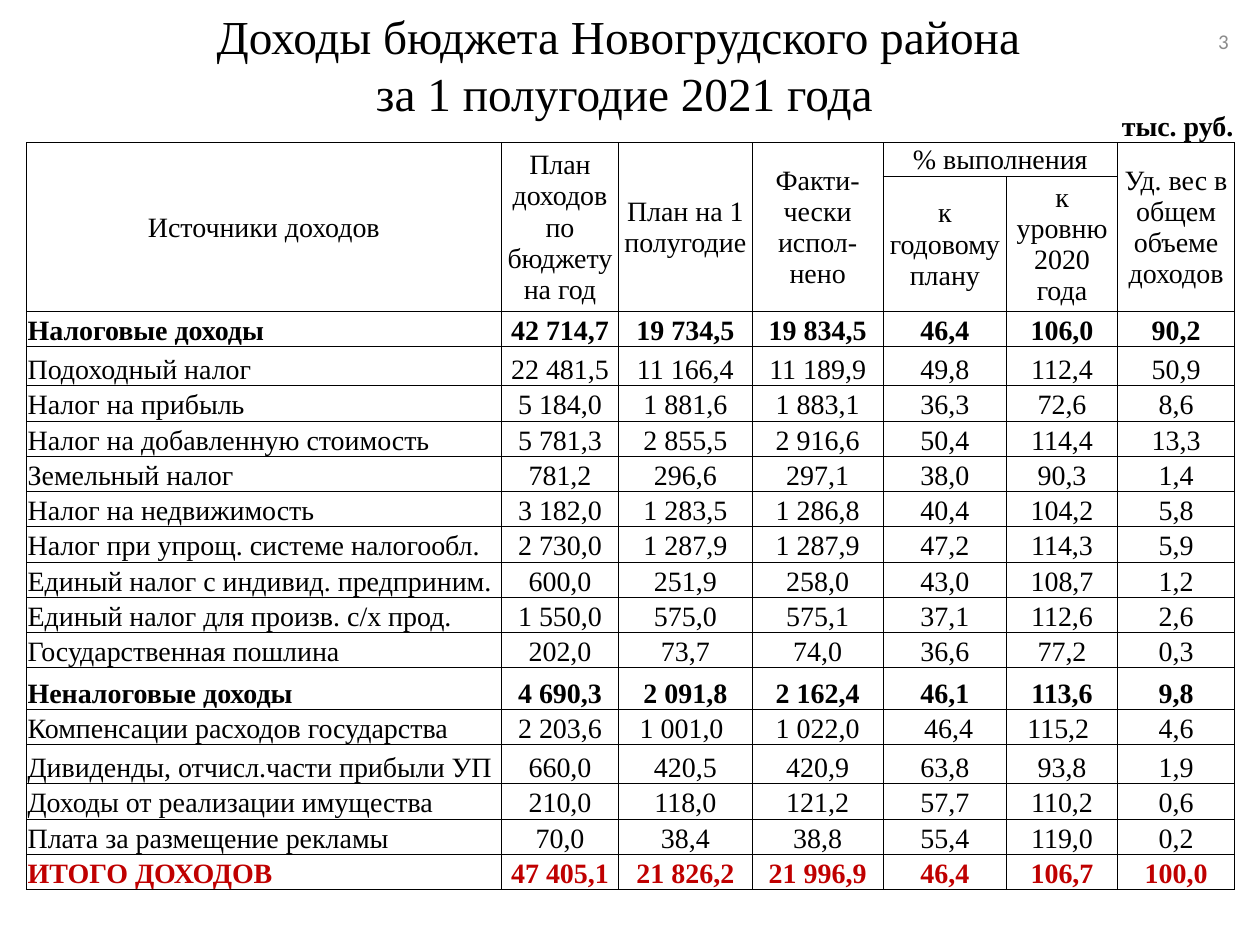
from lxml import etree
from pptx import Presentation
from pptx import util as u
from pptx.dml.color import RGBColor
from pptx.enum import text
from pptx.oxml.ns import qn

BLACK = RGBColor(0, 0, 0)
RED = RGBColor(0xC0, 0, 0)
GREY = RGBColor(0x8C, 0x8C, 0x8C)
SERIF = "Times New Roman"
LEFT, MID, RIGHT = text.PP_ALIGN.LEFT, text.PP_ALIGN.CENTER, text.PP_ALIGN.RIGHT
PLAIN = "{2D5ABB26-0587-4C30-8999-92F81FD0307C}"

HEADS = {
    (0, 5): "тыс. руб.",
    (1, 0): "Источники доходов",
    (1, 1): "План доходов по бюджету на год",
    (1, 2): "План на 1 полугодие",
    (1, 3): "Факти-чески испол-нено",
    (1, 4): "% выполнения",
    (1, 6): "Уд. вес в общем объеме доходов",
    (2, 4): "к годовому плану",
    (2, 5): "к\nуровню 2020 года",
}
DATA = [
    "Налоговые доходы|42 714,7|19 734,5|19 834,5|46,4|106,0|90,2",
    "Подоходный налог|22 481,5|11 166,4|11 189,9|49,8|112,4|50,9",
    "Налог на прибыль|5 184,0|1 881,6|1 883,1|36,3|72,6|8,6",
    "Налог на добавленную стоимость|5 781,3|2 855,5|2 916,6|50,4|114,4|13,3",
    "Земельный налог|781,2|296,6|297,1|38,0|90,3|1,4",
    "Налог на недвижимость|3 182,0|1 283,5|1 286,8|40,4|104,2|5,8",
    "Налог при упрощ. системе налогообл.|2 730,0|1 287,9|1 287,9|47,2|114,3|5,9",
    "Единый налог с индивид. предприним.|600,0|251,9|258,0|43,0|108,7|1,2",
    "Единый налог для произв. с/х прод.|1 550,0|575,0|575,1|37,1|112,6|2,6",
    "Государственная пошлина|202,0|73,7|74,0|36,6|77,2|0,3",
    "Неналоговые доходы|4 690,3|2 091,8|2 162,4|46,1|113,6|9,8",
    "Компенсации расходов государства|2 203,6|1 001,0|1 022,0|46,4|115,2|4,6",
    "Дивиденды, отчисл.части прибыли УП|660,0|420,5|420,9|63,8|93,8|1,9",
    "Доходы от реализации имущества|210,0|118,0|121,2|57,7|110,2|0,6",
    "Плата за размещение рекламы|70,0|38,4|38,8|55,4|119,0|0,2",
    "ИТОГО ДОХОДОВ|47 405,1|21 826,2|21 996,9|46,4|106,7|100,0",
]
COLS = [3.77, 0.93, 1.06, 1.04, 0.98, 0.88, 0.93]
TALL = {0: 0.27, 1: 0.27, 2: 1.07, 4: 0.31, 13: 0.33, 15: 0.31}
SPANS = [(0, 5, 0, 6), (1, 4, 1, 5), (1, 6, 2, 6)] + [(1, c, 2, c) for c in range(4)]
BOLD = {0, 3, 13, 18}
NUDGE = {(14, 2): "margin_right", (14, 4): "margin_left", (14, 5): "margin_right"}


def style(frame, side, color, **font):
    for para in frame.paragraphs:
        para.alignment = side
        for run in para.runs:
            run.font.color.rgb = color
            for key, val in font.items():
                setattr(run.font, key, val)


def border(cell, tags):
    props = cell._tc.get_or_add_tcPr()
    for spot, tag in enumerate(tags):
        line = etree.Element(qn("a:" + tag), w=str(u.Pt(0.5)))
        fill = etree.SubElement(line, qn("a:solidFill"))
        etree.SubElement(fill, qn("a:srgbClr"), val=str(BLACK))
        props.insert(spot, line)


deck = Presentation()
deck.slide_width, deck.slide_height = u.Inches(10), u.Inches(7.5)
slide = deck.slides.add_slide(deck.slide_layouts[5])

title = slide.shapes.title
spot = {"left": 0.23, "top": 0.16, "width": 9.45, "height": 0.7}
for key, val in spot.items():
    setattr(title, key, u.Inches(val))
frame = title.text_frame
frame.text = "Доходы бюджета Новогрудского района \vза 1 полугодие 2021 года"
frame.auto_size = text.MSO_AUTO_SIZE.NONE
frame.vertical_anchor = text.MSO_ANCHOR.MIDDLE
style(frame, MID, BLACK, name=SERIF, size=u.Pt(27))

cells = dict(HEADS)
for r, line in enumerate(DATA, 3):
    for c, word in enumerate(line.split("|")):
        cells[r, c] = word

rows = [TALL.get(r, 0.28) for r in range(19)]
box = [u.Inches(n) for n in (0.21, 0.85, sum(COLS), sum(rows))]
table = slide.shapes.add_table(len(rows), len(COLS), *box).table
table.first_row = table.horz_banding = False
table._tbl.tblPr.find(qn("a:tableStyleId")).text = PLAIN
for col, wide in zip(table.columns, COLS):
    col.width = u.Inches(wide)
for row, high in zip(table.rows, rows):
    row.height = u.Inches(high)

for r in range(len(rows)):
    for c in range(len(COLS)):
        cell = table.cell(r, c)
        head = r in (1, 2)
        form = {
            "margin_left": u.Inches(0.01),
            "margin_right": u.Inches(0.01),
            "margin_top": u.Inches(0.01),
            "margin_bottom": 0,
            "vertical_anchor": text.MSO_ANCHOR.MIDDLE if head else text.MSO_ANCHOR.BOTTOM,
        }
        if (r, c) in NUDGE:
            form[NUDGE[r, c]] = u.Inches(0.07)
        for key, val in form.items():
            setattr(cell, key, val)
        cell.fill.background()
        border(cell, ["lnL", "lnR", "lnT", "lnB"] if r else ["lnB"])
        frame = cell.text_frame
        if (r, c) in cells:
            frame.text = cells[r, c]
            side = RIGHT if r == 0 else MID if head or c else LEFT
            style(frame, side, RED if r == 18 else BLACK,
                  name=SERIF, size=u.Pt(16), bold=r in BOLD)
        else:
            etree.SubElement(frame.paragraphs[0]._p, qn("a:endParaRPr"), sz="1600")

for top, left, low, right in SPANS:
    table.cell(top, left).merge(table.cell(low, right))

page = slide.shapes.add_textbox(*[u.Inches(n) for n in (7.52, 0.13, 2.33, 0.4)])
frame = page.text_frame
frame.text = "3"
frame.word_wrap = True
frame.vertical_anchor = text.MSO_ANCHOR.MIDDLE
style(frame, RIGHT, GREY, name="Calibri", size=u.Pt(12))

deck.save("out.pptx")
